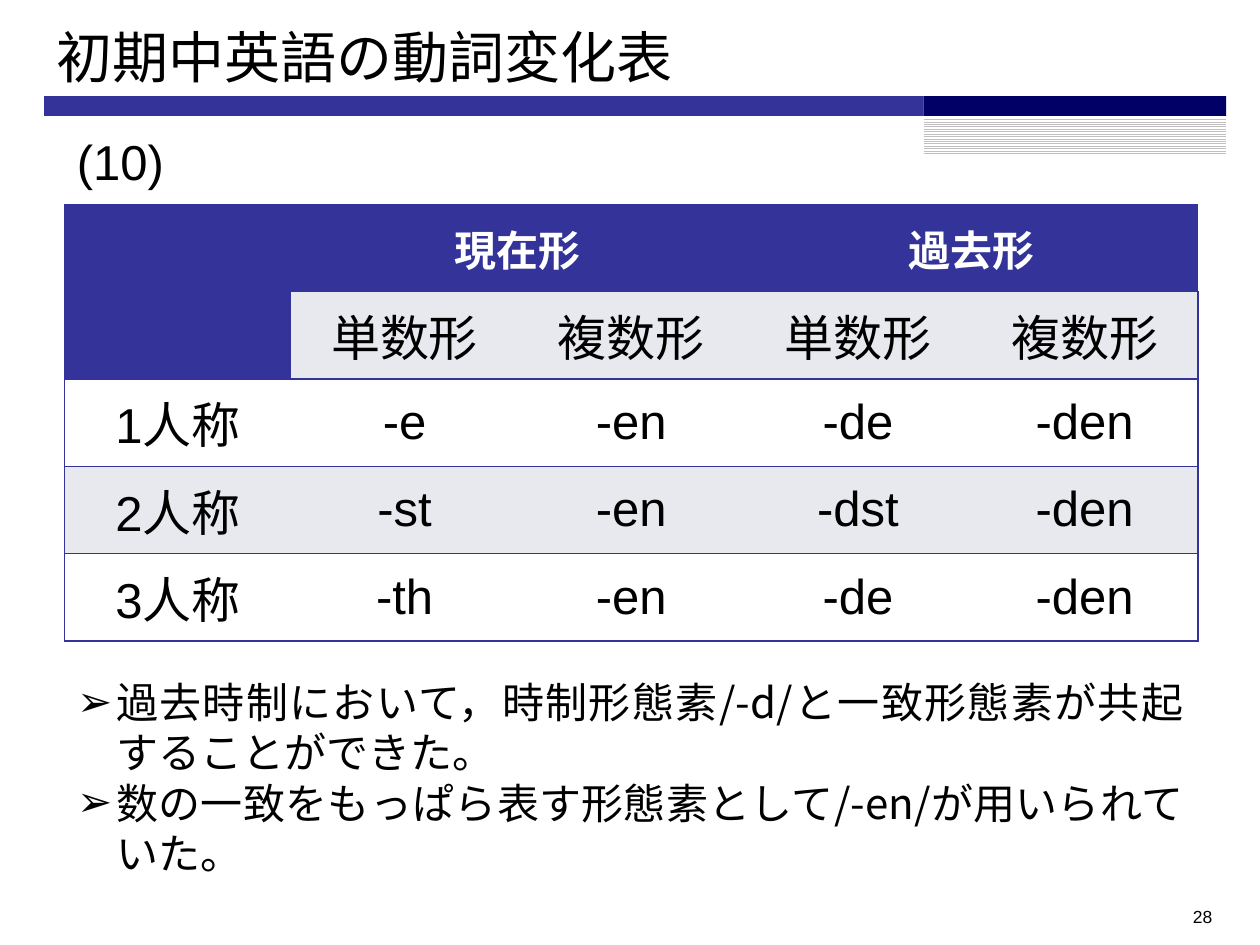
from lxml.etree import SubElement
from pptx import Presentation
from pptx.dml.color import RGBColor
from pptx.enum.dml import MSO_PATTERN
from pptx.enum.shapes import MSO_SHAPE
from pptx.enum.text import MSO_ANCHOR, MSO_AUTO_SIZE, PP_ALIGN
from pptx.oxml.ns import qn
from pptx.util import Cm, Pt

BLUE, NAVY, PALE = "333399", "000066", "E8E8EF"
BLACK, WHITE, GREY = "000000", "FFFFFF", "C0C0C0"
LATIN, KANJI = "Arial", "Noto Sans CJK JP"


def color(code):
    return RGBColor.from_string(code)


class Page:
    """Holds the style and the current slide."""

    def __init__(self, deck):
        self.slide = deck.slides.add_slide(deck.slide_layouts[1])
        self.shapes = self.slide.shapes

    def style(self, para, size, font=LATIN, ink=BLACK, bold=False,
              align=PP_ALIGN.LEFT):
        para.alignment = align
        for run in para.runs:
            run.font.size = Pt(size)
            run.font.name = font
            run.font.bold = bold
            run.font.color.rgb = color(ink)
            east = SubElement(run.font._element, qn("a:ea"))
            east.set("typeface", KANJI)

    def place(self, shape, left, top, width, height):
        shape.left, shape.top = Cm(left), Cm(top)
        shape.width, shape.height = Cm(width), Cm(height)

    def bar(self, left, top, width, height, fill, back=None):
        box = self.shapes.add_shape(MSO_SHAPE.RECTANGLE, Cm(left), Cm(top),
                                    Cm(width), Cm(height))
        box.shadow.inherit = False
        box.line.fill.background()
        if back:
            box.fill.patterned()
            box.fill.pattern = MSO_PATTERN.LIGHT_HORIZONTAL
            box.fill.fore_color.rgb = color(fill)
            box.fill.back_color.rgb = color(back)
        else:
            box.fill.solid()
            box.fill.fore_color.rgb = color(fill)

    def title(self, text, *area):
        shape = self.shapes.title
        self.place(shape, *area)
        frame = shape.text_frame
        frame.text = text
        frame.auto_size = MSO_AUTO_SIZE.NONE
        frame.vertical_anchor = MSO_ANCHOR.MIDDLE
        self.style(frame.paragraphs[0], 32, KANJI)

    def bullets(self, lines, *area):
        shape = self.slide.placeholders[1]
        self.place(shape, *area)
        frame = shape.text_frame
        frame.text = "\n".join(lines)
        frame.auto_size = MSO_AUTO_SIZE.NONE
        for para in frame.paragraphs:
            self.style(para, 24, KANJI, align=PP_ALIGN.JUSTIFY)
            para.space_before = Pt(0)
            props = para._p.get_or_add_pPr()
            props.set("marL", str(Cm(0.79)))
            props.set("indent", str(-Cm(0.79)))
            SubElement(props, qn("a:buFont")).set("typeface", LATIN)
            SubElement(props, qn("a:buChar")).set("char", "➢")

    def label(self, text, size, align, *area):
        box = self.shapes.add_textbox(*map(Cm, area))
        frame = box.text_frame
        frame.word_wrap = True
        frame.text = text
        self.style(frame.paragraphs[0], size, align=align)

    def border(self, cell, sides):
        props = cell._tc.get_or_add_tcPr()
        for side in "LRTB":
            line = SubElement(props, qn("a:ln" + side), w=str(Pt(1)))
            if side in sides:
                paint = SubElement(line, qn("a:solidFill"))
                SubElement(paint, qn("a:srgbClr"), val=BLUE)
            else:
                SubElement(line, qn("a:noFill"))

    def table(self, rows, merges, left, top, wide, high):
        count = len(rows[0])
        grid = self.shapes.add_table(
            len(rows), count, Cm(left), Cm(top),
            Cm(wide * count), Cm(high * len(rows))).table
        for col in grid.columns:
            col.width = Cm(wide)
        for r, row in enumerate(rows):
            grid.rows[r].height = Cm(high)
            for c, text in enumerate(row):
                cell = grid.cell(r, c)
                head = r == 0
                dark = head or (r == 1 and c == 0)
                edge = "L" if c == 0 else "R" if c == count - 1 else ""
                self.border(cell, "TB" + edge)
                cell.fill.solid()
                cell.fill.fore_color.rgb = color(
                    BLUE if dark else PALE if r % 2 else WHITE)
                cell.vertical_anchor = MSO_ANCHOR.MIDDLE
                if text:
                    cell.text = text
                    self.style(cell.text_frame.paragraphs[0],
                               24 if head else 28,
                               ink=WHITE if head else BLACK,
                               bold=head, align=PP_ALIGN.CENTER)
        for start, end in merges:
            grid.cell(*start).merge(grid.cell(*end))


def main():
    deck = Presentation()
    deck.slide_width, deck.slide_height = Cm(25.4), Cm(19.05)
    page = Page(deck)

    # Title and the rule below it
    page.bar(0.89, 1.94, 17.73, 0.4, BLUE)
    page.bar(18.62, 2.36, 6.1, 0.76, GREY, WHITE)
    page.bar(18.62, 1.94, 6.1, 0.4, NAVY)
    page.title("初期中英語の動詞変化表", 0.89, 0.33, 23.83, 1.6)

    # Verb endings
    page.label("(10)", 28, PP_ALIGN.LEFT, 1.3, 2.52, 2.39, 1.45)
    rows = [
        ["", "現在形", "", "過去形", ""],
        ["", *["単数形", "複数形"] * 2],
        ["1人称", "-e", "-en", "-de", "-den"],
        ["2人称", "-st", "-en", "-dst", "-den"],
        ["3人称", "-th", "-en", "-de", "-den"],
    ]
    merges = [((0, 0), (1, 0)), ((0, 1), (0, 2)), ((0, 3), (0, 4))]
    page.table(rows, merges, 1.3, 4.12, 4.57, 1.76)

    # Remarks
    page.bullets([
        "過去時制において，時制形態素/-d/と一致形態素が共起することができた。",
        "数の一致をもっぱら表す形態素として/-en/が用いられていた。",
    ], 1.3, 13.51, 22.81, 4.37)

    # Page number
    page.label("28", 10, PP_ALIGN.RIGHT, 18.77, 18.14, 5.92, 0.74)
    deck.save("out.pptx")


if __name__ == "__main__":
    main()
